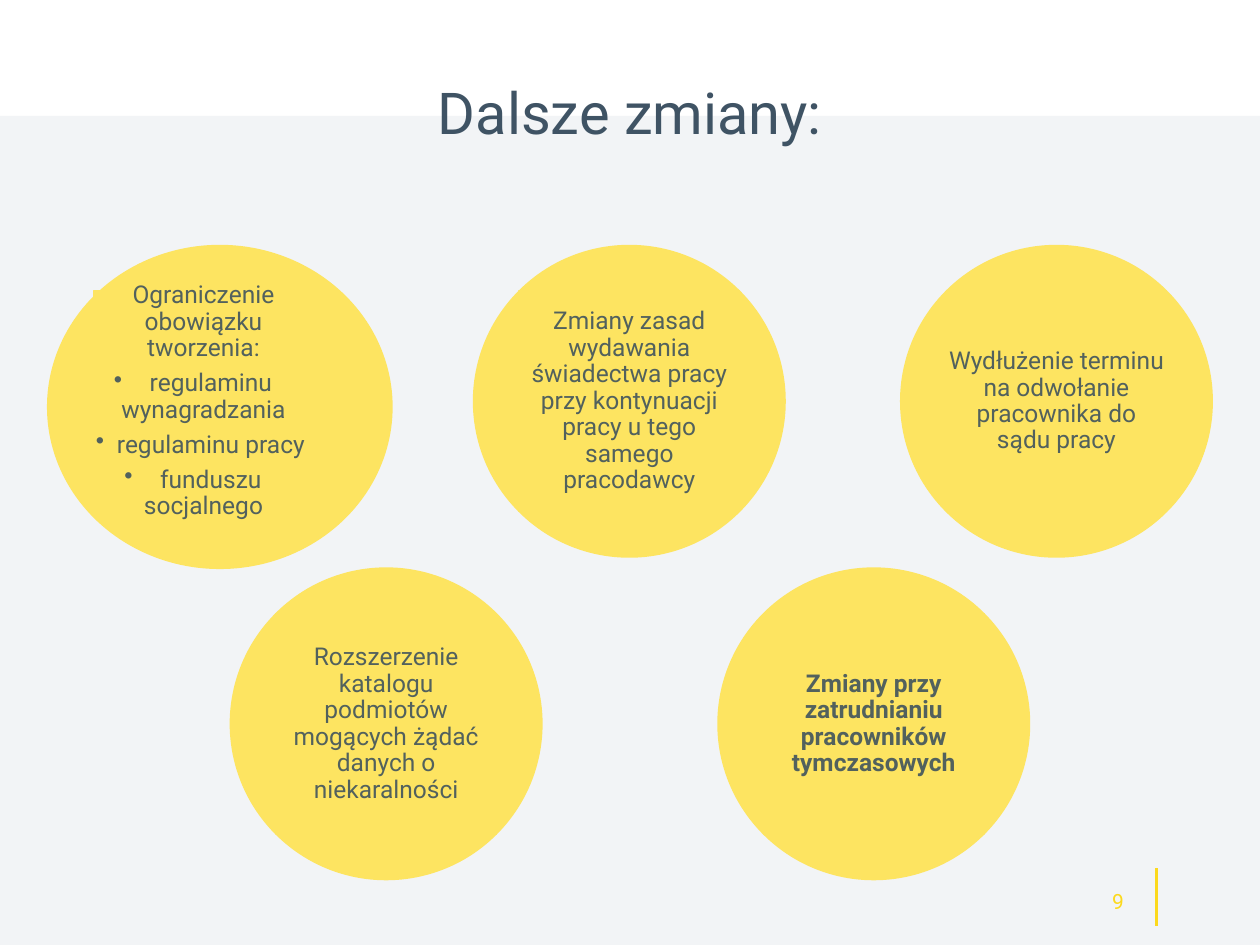
from pptx import Presentation
from pptx.dml.color import RGBColor
from pptx.enum.shapes import MSO_CONNECTOR, MSO_SHAPE
from pptx.enum.text import MSO_ANCHOR, MSO_AUTO_SIZE, PP_ALIGN
from pptx.oxml.ns import qn
from pptx.util import Inches, Pt
from lxml import etree

RECT, OVAL = MSO_SHAPE.RECTANGLE, MSO_SHAPE.OVAL
STRAIGHT = MSO_CONNECTOR.STRAIGHT
MIDDLE = MSO_ANCHOR.MIDDLE
CENTER, RIGHT = PP_ALIGN.CENTER, PP_ALIGN.RIGHT
NO_FIT = MSO_AUTO_SIZE.NONE

PALE = RGBColor(0xF2, 0xF4, 0xF6)
YELLOW = RGBColor(0xFD, 0xE4, 0x61)
GOLD = RGBColor(0xFC, 0xD9, 0x1D)
NAVY = RGBColor(0x3F, 0x53, 0x64)
GRAY = RGBColor(0x52, 0x61, 0x5D)

FONT = "Roboto"
CIRCLE, LABEL, INSET = 2.47, 1.75, 0.36


class Deck:
    """Holds the text style and the current slide, and adds elements to it."""

    def __init__(self, prs):
        self.s = prs.slides.add_slide(prs.slide_layouts[5])
        self.body = {"name": FONT, "size": Pt(14), "bold": False}

    def text(self, sp, lines, color, align=CENTER, spacing=None, after=None,
             bullets=False, **style):
        tf = sp.text_frame
        tf.word_wrap = True
        tf.auto_size = NO_FIT
        tf.vertical_anchor = MIDDLE
        for i, line in enumerate(lines):
            p = tf.add_paragraph() if i else tf.paragraphs[0]
            if bullets and i:
                bullet = etree.SubElement(p._p.get_or_add_pPr(), qn("a:buChar"))
                bullet.set("char", "•")
            r = p.add_run()
            r.text = line
            layout = {"alignment": align, "line_spacing": spacing, "space_after": after}
            for key, value in layout.items():
                setattr(p, key, value)
            for key, value in {**self.body, **style}.items():
                setattr(r.font, key, value)
            r.font.color.rgb = color

    def shape(self, kind, x, y, w, h, fill, line=None):
        sp = self.s.shapes.add_shape(kind, *map(Inches, (x, y, w, h)))
        sp.shadow.inherit = False
        sp.fill.solid()
        sp.fill.fore_color.rgb = fill
        if line:
            sp.line.color.rgb = fill
            sp.line.width = Pt(line)
        else:
            sp.line.fill.background()
        return sp

    def line(self, x1, y1, x2, y2, color, width):
        sp = self.s.shapes.add_connector(STRAIGHT, *map(Inches, (x1, y1, x2, y2)))
        sp.line.color.rgb = color
        sp.line.width = Pt(width)
        etree.SubElement(sp._element.spPr, qn("a:effectLst"))

    def title(self, text, x, y, w, h):
        sp = self.s.shapes.title
        box = {"left": x, "top": y, "width": w, "height": h}
        for key, value in box.items():
            setattr(sp, key, Inches(value))
        sp.element.getparent().append(sp.element)
        self.text(sp, [text], NAVY, spacing=0.9, size=Pt(33))

    def number(self, text, x, y, w, h):
        sp = self.s.shapes.add_textbox(*map(Inches, (x, y, w, h)))
        self.text(sp, [text], GOLD, RIGHT, size=Pt(12))

    def circle(self, x, y, lines, w=CIRCLE, h=CIRCLE, bold=False):
        self.shape(OVAL, x, y, w, h, YELLOW, 1)
        sp = self.shape(RECT, x + INSET, y + INSET, LABEL, LABEL, YELLOW, 0.75)
        for side in ("left", "top", "right", "bottom"):
            setattr(sp.text_frame, f"margin_{side}", Inches(0.02))
        self.text(sp, lines, GRAY, spacing=0.9, after=Pt(4.9), bullets=True, bold=bold)


def main():
    prs = Presentation()
    prs.slide_width, prs.slide_height = Inches(10), Inches(7.5)
    deck = Deck(prs)
    deck.shape(RECT, 0, 0.92, 10, 6.58, PALE)
    deck.line(9.18, 6.89, 9.18, 7.35, GOLD, 1.5)
    deck.title("Dalsze zmiany:", 0.69, 0.39, 8.62, 1.06)
    deck.number("9", 7.06, 6.95, 1.96, 0.4)

    top, bottom = 1.95, 4.51
    deck.circle(0.38, top, [
        "Ograniczenie obowiązku tworzenia:",
        " regulaminu wynagradzania",
        " regulaminu pracy",
        " funduszu socjalnego",
    ], w=2.73, h=2.56)
    deck.circle(3.76, top, ["Zmiany zasad wydawania świadectwa pracy przy "
                            "kontynuacji pracy u tego samego pracodawcy"])
    deck.circle(7.15, top, ["Wydłużenie terminu na odwołanie pracownika do sądu pracy"])
    deck.circle(5.7, bottom, ["Zmiany przy zatrudnianiu pracowników tymczasowych"],
                bold=True)
    deck.circle(1.83, bottom, ["Rozszerzenie katalogu podmiotów mogących żądać "
                               "danych o niekaralności"])
    prs.save("out.pptx")


if __name__ == "__main__":
    main()
